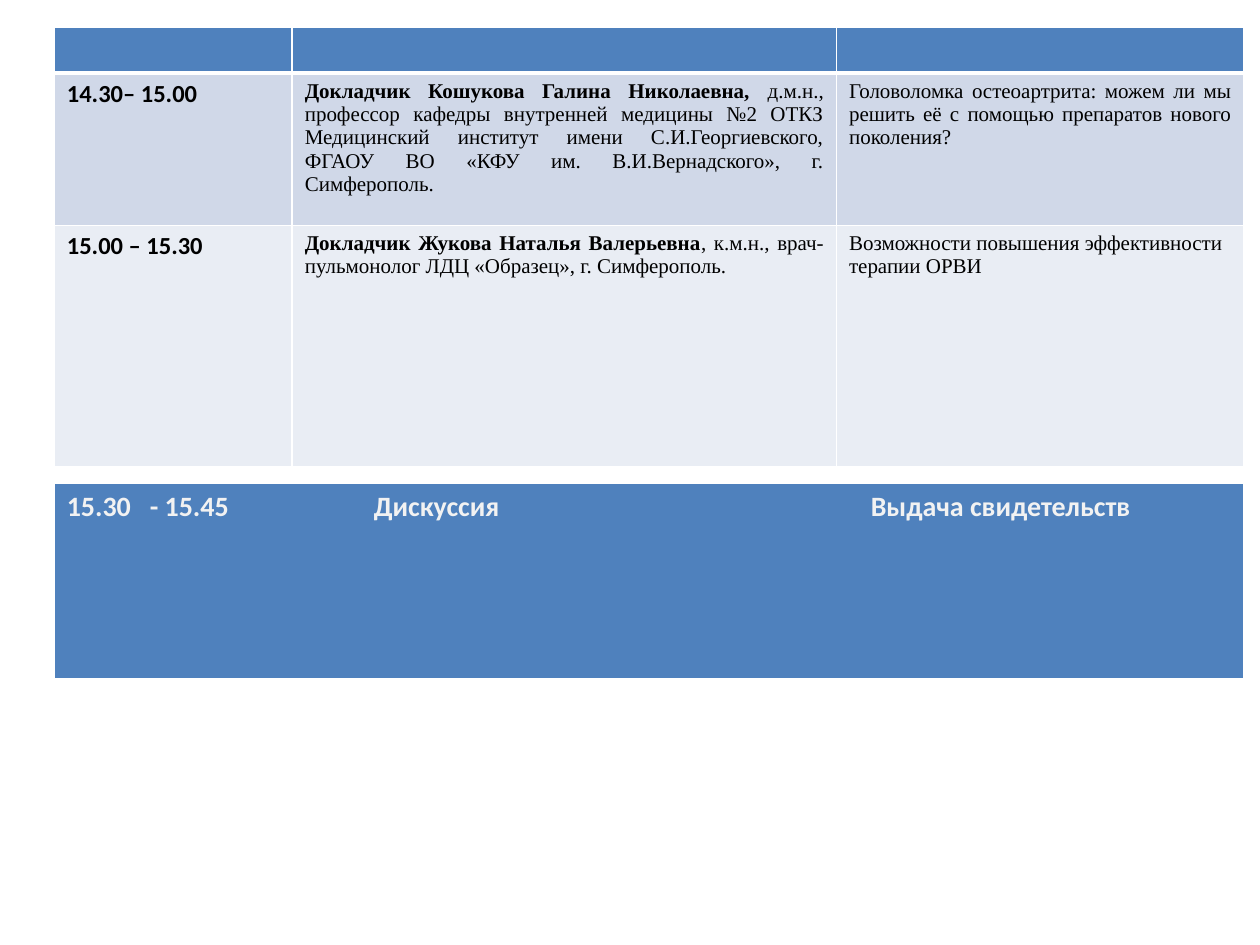
"""Build a conference programme slide with two schedule tables."""
from lxml.etree import SubElement
from pptx import Presentation
from pptx.dml.color import RGBColor
from pptx.enum.text import PP_ALIGN
from pptx.oxml.ns import qn
from pptx.util import Pt

COLORS = {"blue": "4F81BD", "band": "D0D8E8", "light": "E9EDF4",
          "white": "FFFFFF", "black": "000000", "pale": "F2F2F2"}
TIME = {"name": "Calibri", "size": Pt(14), "bold": True}
SPEAKER = {"name": "Times New Roman", "size": Pt(12), "bold": True}
BODY = {**SPEAKER, "bold": False}
CLOSING = {"name": "Calibri", "size": Pt(16), "bold": True}
LEFT, WIDTH = 31, 680
HEADER_MARGINS = {"margin_top": Pt(2), "margin_bottom": Pt(2)}
SESSIONS = [
    ("band", "14.30– 15.00",
     "Докладчик Кошукова Галина Николаевна, ",
     "д.м.н., профессор кафедры внутренней медицины №2 ОТКЗ Медицинский "
     "институт имени С.И.Георгиевского, ФГАОУ ВО «КФУ им. В.И.Вернадского», "
     "г. Симферополь.",
     "Головоломка остеоартрита: можем ли мы решить её с помощью препаратов "
     "нового поколения?", PP_ALIGN.JUSTIFY),
    ("light", "15.00 – 15.30",
     "Докладчик Жукова Наталья Валерьевна",
     ", к.м.н., врач-пульмонолог ЛДЦ «Образец», г. Симферополь.",
     "Возможности повышения эффективности терапии ОРВИ", PP_ALIGN.LEFT),
]


def set_attributes(target, values):
    """Set each named attribute on the target."""
    for name, value in values.items():
        setattr(target, name, value)


def add_table(slide, top, columns, rows):
    """Add a table sized by its column widths and row heights."""
    frame = slide.shapes.add_table(len(rows), len(columns), Pt(LEFT), Pt(top),
                                   Pt(sum(columns)), Pt(sum(rows)))
    table = frame.table
    for column, width in zip(table.columns, columns):
        column.width = Pt(width)
    for row, height in zip(table.rows, rows):
        row.height = Pt(height)
    return table


def format_cell(cell, fill, top=1, bottom=1):
    """Give a cell white borders and a solid fill."""
    properties = cell._tc.get_or_add_tcPr()
    for side, width in {"L": 1, "R": 1, "T": top, "B": bottom}.items():
        line = SubElement(properties, qn(f"a:ln{side}"), w=str(Pt(width)))
        solid = SubElement(line, qn("a:solidFill"))
        SubElement(solid, qn("a:srgbClr"), val=COLORS["white"])
    cell.fill.solid()
    cell.fill.fore_color.rgb = RGBColor.from_string(COLORS[fill])


def write_cell(cell, runs, color="black", alignment=PP_ALIGN.LEFT):
    """Write formatted runs into the cell's paragraph."""
    paragraph = cell.text_frame.paragraphs[0]
    paragraph.alignment = alignment
    for text, font_values in runs:
        run = paragraph.add_run()
        run.text = text
        set_attributes(run.font, font_values)
        run.font.color.rgb = RGBColor.from_string(COLORS[color])
    return paragraph


def add_tab_stops(paragraph, positions):
    """Set left tab stops at the given positions."""
    tabs = SubElement(paragraph._p.get_or_add_pPr(), qn("a:tabLst"))
    for position in positions:
        SubElement(tabs, qn("a:tab"), pos=str(Pt(position)), algn="l")


def add_sessions(slide):
    """Add the talks with times, speakers and topics."""
    table = add_table(slide, 15.5, [136, 311, 233], [26.3, 87, 138])
    for cell in table.rows[0].cells:
        set_attributes(cell, HEADER_MARGINS)
        format_cell(cell, "blue", bottom=3)
    for index, session in enumerate(SESSIONS, start=1):
        fill, time, speaker, position, topic, topic_alignment = session
        contents = [([(time, TIME)], PP_ALIGN.LEFT),
                    ([(speaker, SPEAKER), (position, BODY)], PP_ALIGN.JUSTIFY),
                    ([(topic, BODY)], topic_alignment)]
        for cell, (runs, alignment) in zip(table.rows[index].cells, contents):
            format_cell(cell, fill, top=3 if index == 1 else 1)
            write_cell(cell, runs, alignment=alignment)


def add_closing(slide):
    """Add the closing band with discussion and certificates."""
    cell = add_table(slide, 276, [WIDTH], [112.5]).cell(0, 0)
    format_cell(cell, "blue", bottom=3)
    text = "15.30\t- 15.45\tДискуссия\tВыдача свидетельств"
    paragraph = write_cell(cell, [(text, CLOSING)], color="pale")
    add_tab_stops(paragraph, [47.4, 175.4, 459.4])


def main():
    """Create and save the presentation."""
    presentation = Presentation()
    set_attributes(presentation, {"slide_width": Pt(720), "slide_height": Pt(540)})
    slide = presentation.slides.add_slide(presentation.slide_layouts[6])
    add_sessions(slide)
    add_closing(slide)
    presentation.save("out.pptx")


if __name__ == "__main__":
    main()
